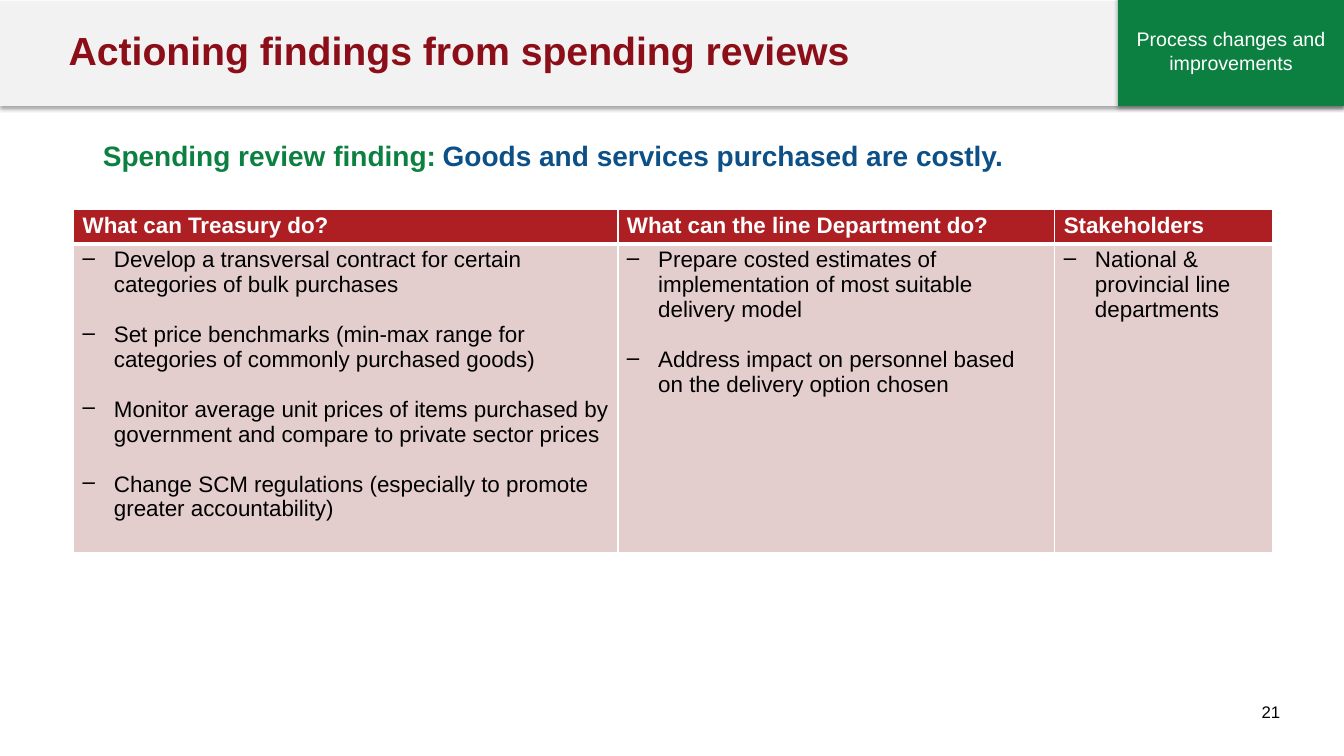
from dataclasses import dataclass
from lxml.etree import SubElement as Sub
from pptx import Presentation
from pptx.dml.color import RGBColor as Rgb
from pptx.enum.shapes import MSO_SHAPE as Kind
from pptx.enum.text import MSO_ANCHOR as Anchor, MSO_AUTO_SIZE as Fit, PP_ALIGN as Align
from pptx.oxml.ns import qn
from pptx.util import Inches, Pt


@dataclass(frozen=True)
class Theme:
    face: str = "Arial"
    white: str = "FFFFFF"
    black: str = "000000"
    band: str = "F2F2F2"
    green: str = "0C8041"
    blue: str = "0D5087"
    navy: str = "002060"
    wine: str = "8B0E18"
    red: str = "AE1F24"
    pink: str = "E3CDCD"
    title: int = 28
    lead: int = 20
    text: int = 16
    tag: int = 14
    page: int = 12


LOOK = Theme()
WIDE, HIGH = Inches(13.33), Inches(7.5)
HEADS = ["What can Treasury do?", "What can the line Department do?", "Stakeholders"]
LISTS = [
    ["Develop a transversal contract for certain categories of bulk purchases",
     "Set price benchmarks (min-max range for categories of commonly purchased goods)",
     "Monitor average unit prices of items purchased by government and compare to private sector prices",
     "Change SCM regulations (especially to promote greater accountability)"],
    ["Prepare costed estimates of implementation of most suitable delivery model",
     "Address impact on personnel based on the delivery option chosen"],
    ["National & provincial line departments"],
]
COLS = [40.5, 32.5, 16.2]
ROWS = [4.5, 40.9]


def across(share):
    return round(WIDE * share / 100)


def down(share):
    return round(HIGH * share / 100)


def area(x, y, w, h):
    return across(x), down(y), across(w), down(h)


def place(shape, *spot):
    shape.left, shape.top, shape.width, shape.height = area(*spot)


def style(font, size, color, bold=False):
    font.name, font.size, font.bold = LOOK.face, Pt(size), bold
    font.color.rgb = Rgb.from_string(color)


def paint(fill, color):
    fill.solid()
    fill.fore_color.rgb = Rgb.from_string(color)


def tint(node, color):
    return Sub(Sub(node, qn("a:solidFill")), qn("a:srgbClr"), val=color)


def block(slide, color, *spot):
    shape = slide.shapes.add_shape(Kind.RECTANGLE, *area(*spot))
    paint(shape.fill, color)
    shape.line.fill.background()
    shape.shadow.inherit = False
    glow = Sub(shape.element.spPr.find(qn("a:effectLst")), qn("a:outerShdw"),
               blurRad=str(Pt(3.1)), dist=str(Pt(1.8)), dir="5400000", rotWithShape="0")
    shade = Sub(glow, qn("a:srgbClr"), val=LOOK.black)
    Sub(shade, qn("a:alpha"), val="35000")
    return shape


def indent(par, mark=None, left=0):
    props = par._p.get_or_add_pPr()
    props.set("marL", str(left))
    props.set("indent", str(-left))
    if mark:
        Sub(props, qn("a:buChar"), char=mark)
    else:
        Sub(props, qn("a:buNone"))


def edge(cell, top, bottom):
    props = cell._tc.get_or_add_tcPr()
    for spot, (side, width) in enumerate(zip("LRTB", (1, 1, top, bottom))):
        line = Sub(props, qn(f"a:ln{side}"), w=str(Pt(width)))
        tint(line, LOOK.white)
        props.insert(spot, line)


def fill_cell(cell, items, head):
    paint(cell.fill, LOOK.red if head else LOOK.pink)
    edge(cell, 1 if head else 3, 3 if head else 1)
    cell.margin_left = cell.margin_right = Inches(0.09)
    cell.margin_top = cell.margin_bottom = Inches(0.04)
    frame = cell.text_frame
    for spot, words in enumerate(items):
        par = frame.add_paragraph() if spot else frame.paragraphs[0]
        par.text = words
        style(par.font, LOOK.text, LOOK.white if head else LOOK.black, head)
        if spot:
            par.space_before = Pt(17.8)
        if not head:
            indent(par, "–", Inches(0.31))


def add_grid(slide):
    spot = area(5.48, 27.75, sum(COLS), sum(ROWS))
    grid = slide.shapes.add_table(len(ROWS), len(COLS), *spot).table
    for row, share in zip(grid.rows, ROWS):
        row.height = down(share)
    for col, share in enumerate(COLS):
        grid.columns[col].width = across(share)
        fill_cell(grid.cell(0, col), [HEADS[col]], True)
        fill_cell(grid.cell(1, col), LISTS[col], False)


def add_title(slide):
    band = block(slide, LOOK.band, 0, 0.13, 100, 13.87)
    title = slide.shapes.title
    title.element.addprevious(band.element)
    place(title, 4.35, 3.6, 62, 6)
    frame = title.text_frame
    frame.text = "Actioning findings from spending reviews"
    frame.auto_size, frame.vertical_anchor = Fit.NONE, Anchor.MIDDLE
    par = frame.paragraphs[0]
    par.alignment = Align.LEFT
    style(par.font, LOOK.title, LOOK.wine, True)


def add_lead(slide):
    body = slide.placeholders[1]
    place(body, 6.9, 17.6, 86.3, 9.7)
    body.text_frame.auto_size = Fit.NONE
    par = body.text_frame.paragraphs[0]
    indent(par)
    for words, size, color, bold in (
        ("Spending review finding:", LOOK.lead, LOOK.green, True),
        (" ", LOOK.text, LOOK.navy, False),
        ("Goods and services purchased are costly.", LOOK.lead, LOOK.blue, True),
    ):
        run = par.add_run()
        run.text = words
        style(run.font, size, color, bold)


def label(shape, words, size, color, align):
    frame = shape.text_frame
    frame.word_wrap = True
    frame.text = words
    par = frame.paragraphs[0]
    par.alignment = align
    style(par.font, size, color)


def main():
    deck = Presentation()
    deck.slide_width, deck.slide_height = WIDE, HIGH
    slide = deck.slides.add_slide(deck.slide_layouts[1])
    add_title(slide)
    add_lead(slide)
    add_grid(slide)
    tag = block(slide, LOOK.green, 83.2, -0.53, 16.8, 14.53)
    label(tag, "Process changes and improvements", LOOK.tag, LOOK.white, Align.CENTER)
    page = slide.shapes.add_textbox(*area(90.3, 92.1, 5.7, 5.2))
    label(page, "21", LOOK.page, LOOK.black, Align.RIGHT)
    deck.save("out.pptx")


if __name__ == "__main__":
    main()
